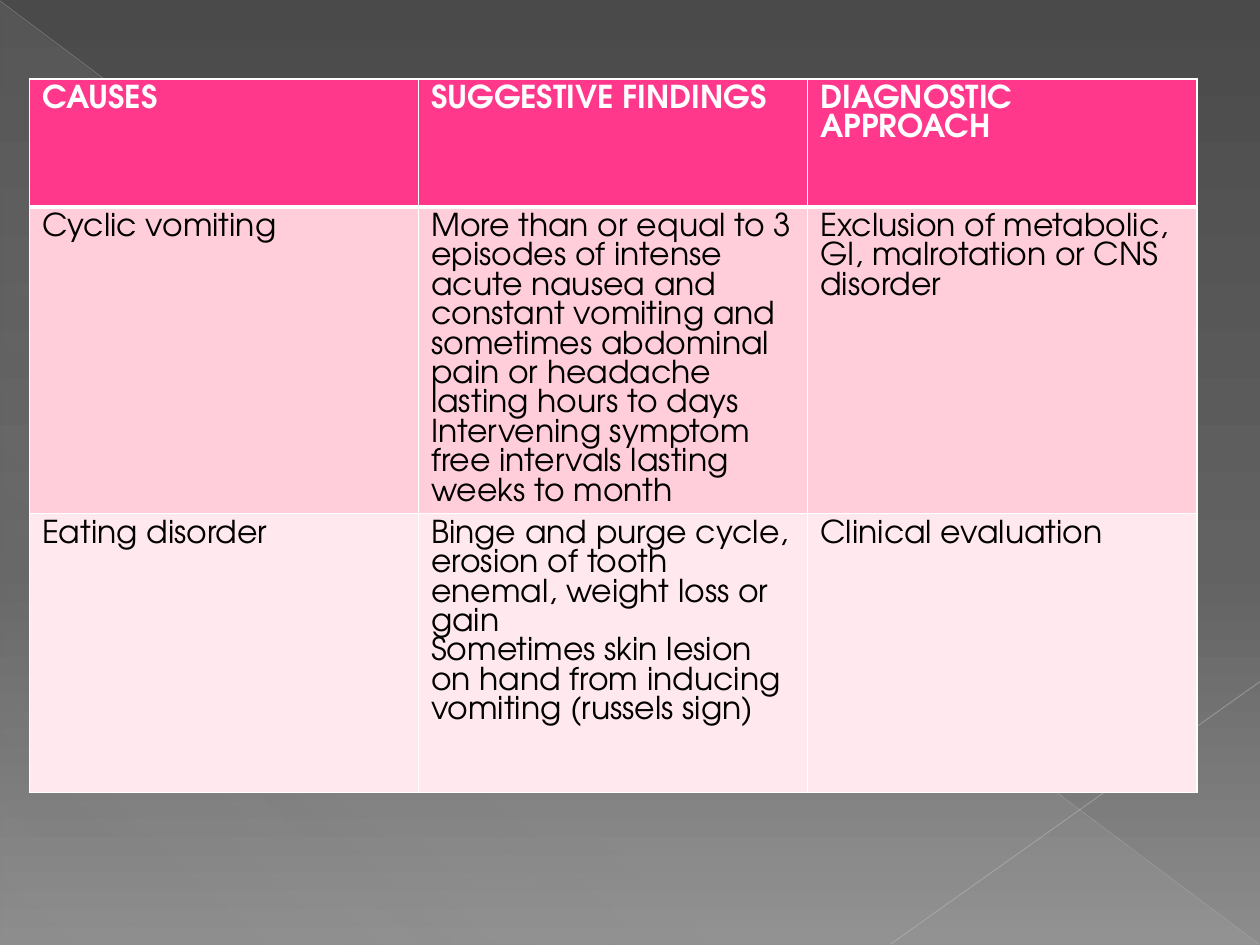
from lxml.etree import SubElement
from pptx import Presentation
from pptx.dml.color import RGBColor
from pptx.enum.shapes import MSO_CONNECTOR, MSO_SHAPE
from pptx.oxml.ns import qn
from pptx.util import Pt

HEADS = ["CAUSES", "SUGGESTIVE FINDINGS", "DIAGNOSTIC APPROACH"]
CYCLIC = [
    "Cyclic vomiting",
    "More than or equal to 3 episodes of intense acute nausea and constant "
    "vomiting and sometimes abdominal pain or headache lasting hours to days\n"
    "Intervening symptom free intervals lasting weeks to month",
    "Exclusion of metabolic, GI, malrotation or CNS disorder",
]
EATING = [
    "Eating disorder",
    "Binge and purge cycle, erosion of tooth enemal, weight loss or gain\n"
    "Sometimes skin lesion on hand from inducing vomiting (russels sign)",
    "Clinical evaluation",
]


def color(code):
    return RGBColor.from_string(code)


def tint(node, code, alpha=100):
    clr = SubElement(node, qn("a:srgbClr"), val=code)
    if alpha < 100:
        SubElement(clr, qn("a:alpha"), val=str(alpha * 1000))


def blend(solid, stops, angle):
    grad = solid.getparent().makeelement(qn("a:gradFill"), {"rotWithShape": "1"})
    items = SubElement(grad, qn("a:gsLst"))
    for place, code, alpha in stops:
        tint(SubElement(items, qn("a:gs"), pos=str(place * 1000)), code, alpha)
    SubElement(grad, qn("a:lin"), ang=str(angle * 60000), scaled="0")
    solid.getparent().replace(solid, grad)


class Deck:
    """Holds the style and current slide, and draws each kind of element."""

    font, size = "TeX Gyre Adventor", Pt(18)

    def __init__(self):
        self.show = Presentation()
        self.show.slide_width, self.show.slide_height = Pt(720), Pt(540)
        self.slide = self.show.slides.add_slide(self.show.slide_layouts[6])

    def back(self, stops, angle):
        ground = self.slide.background
        ground.fill.solid()
        ground.fill.fore_color.rgb = color(stops[0][1])
        blend(self.slide.element.xpath(".//p:bgPr/a:solidFill")[0], stops, angle)

    def wedge(self, box, stops, angle):
        shape = self.slide.shapes.add_shape(MSO_SHAPE.RIGHT_TRIANGLE, *map(Pt, box))
        shape.shadow.inherit = False
        shape.line.fill.background()
        shape.fill.solid()
        shape.fill.fore_color.rgb = color(stops[0][1])
        blend(shape.element.spPr.find(qn("a:solidFill")), stops, angle)

    def line(self, ends, code, width, alpha):
        link = self.slide.shapes.add_connector(MSO_CONNECTOR.STRAIGHT, *map(Pt, ends))
        link.line.width = Pt(width)
        link.line.color.rgb = color(code)
        props = link.element.spPr
        clr = props.find(".//" + qn("a:srgbClr"))
        SubElement(clr, qn("a:alpha"), val=str(alpha * 1000))
        SubElement(props, qn("a:effectLst"))

    def cell(self, cell, text, fill, ink, bold, edges):
        props = cell._tc.get_or_add_tcPr()
        for side, width in edges.items():
            edge = SubElement(props, qn("a:ln" + side), w=str(Pt(width)))
            tint(SubElement(edge, qn("a:solidFill")), "FFFFFF")
        cell.fill.solid()
        cell.fill.fore_color.rgb = color(fill)
        frame = cell.text_frame
        for num, part in enumerate(text.split("\n")):
            para = frame.add_paragraph() if num else frame.paragraphs[0]
            run = para.add_run()
            run.text = part
            run.font.name, run.font.size = self.font, self.size
            run.font.bold = bold
            run.font.color.rgb = color(ink)

    def table(self, spot, width, rows):
        count = len(rows[0][0])
        high = sum(row[2] for row in rows)
        grid = self.slide.shapes.add_table(
            len(rows), count, *map(Pt, (*spot, width * count, high))).table
        for col in grid.columns:
            col.width = Pt(width)
        for num, (texts, fill, tall) in enumerate(rows):
            grid.rows[num].height = Pt(tall)
            head = num == 0
            edges = {"L": 1, "R": 1, "T": 3 if num == 1 else 1, "B": 3 if head else 1}
            ink = "FFFFFF" if head else "000000"
            for cell, text in zip(grid.rows[num].cells, texts):
                self.cell(cell, text, fill, ink, head, edges)


def main():
    deck = Deck()
    deck.back([(0, "4A4A4A", 100), (60, "626262", 100), (100, "8C8C8C", 100)], 90)
    deck.wedge((0.5, 1.1, 719, 538.5),
               [(0, "D2D2D2", 10), (70, "D2D2D2", 8), (100, "D2D2D2", 1)], 133)
    deck.line((0, 0.5, 719.5, 539.5), "BFBFBF", 0.39, 35)
    deck.line((720, 389.5, 509, 539.5), "C6C6C6", 0.47, 45)
    deck.table((16.8, 45), 222.4, [(HEADS, "FF388C", 73.2),
                                   (CYCLIC, "FFCEDA", 159.4),
                                   (EATING, "FFE8EE", 159.4)])
    deck.show.save("out.pptx")


if __name__ == "__main__":
    main()
